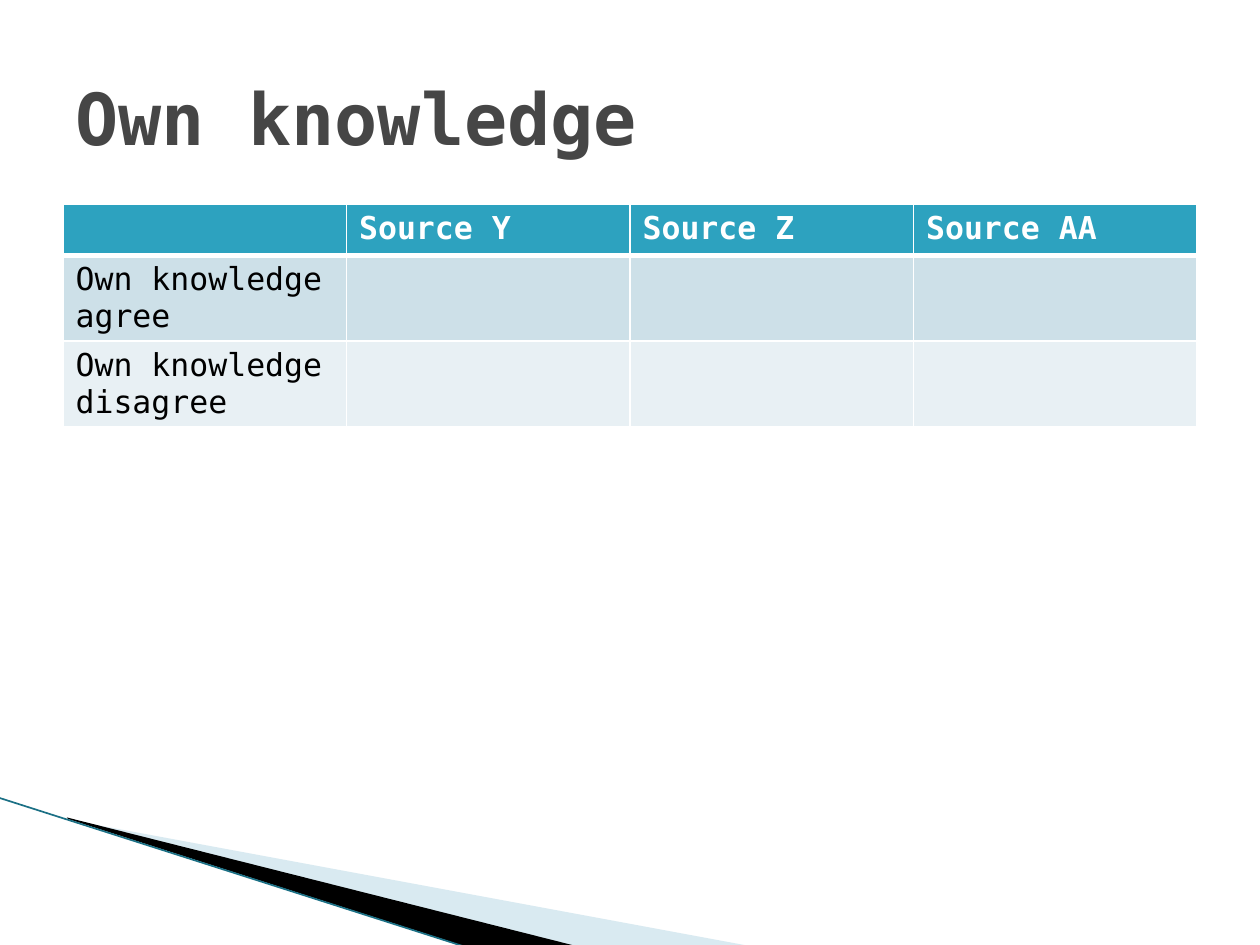
from pptx import Presentation
from pptx.dml.color import RGBColor
from pptx.enum.shapes import MSO_CONNECTOR
from pptx.enum.text import MSO_ANCHOR, PP_ALIGN
from pptx.oxml.ns import qn
from pptx.util import Cm, Pt
from lxml import etree

LEFT, MIDDLE = PP_ALIGN.LEFT, MSO_ANCHOR.MIDDLE
STRAIGHT = MSO_CONNECTOR.STRAIGHT

TITLE = "Own knowledge"
ROWS = [
    ["", "Source Y", "Source Z", "Source AA"],
    ["Own knowledge agree", "", "", ""],
    ["Own knowledge disagree", "", "", ""],
]

THEME = {
    "fills": ["2DA2BF", "CDE0E8", "E8F0F4"],
    "border": "FFFFFF",
    "edge": "1B7085",
    "title": {"name": "DejaVu Sans Mono", "size": Pt(41), "bold": True, "color": "464646"},
    "head": {"name": "DejaVu Sans Mono", "size": Pt(18), "bold": True, "color": "FFFFFF"},
    "body": {"name": "DejaVu Sans Mono", "size": Pt(18), "bold": False, "color": "000000"},
}

# Corner points in cm, fill colour, opacity in percent
WEDGES = [
    ([(1.4, 16.53), (15.11, 19.07), (11.58, 19.07), (1.4, 16.51)], "A0CBDC", 40),
    ([(1.35, 16.48), (11.61, 19.07), (9.45, 19.1), (1.37, 16.51)], "000000", 100),
]
EDGE = [(-0.03, 16.08), (9.42, 19.1)]

MARGIN, WIDTH = 1.27, 22.86
TITLE_TOP, TITLE_HIGH = 0.76, 3.18
TABLE_TOP, ROW_HIGH = 4.12, 1.03
THIN, THICK = Pt(1), Pt(3)


def style(font, look):
    for key, value in look.items():
        if key == "color":
            font.color.rgb = RGBColor.from_string(value)
        else:
            setattr(font, key, value)


def paint(fill, color):
    fill.solid()
    fill.fore_color.rgb = RGBColor.from_string(color)


def add_wedge(slide, points, color, alpha):
    start, *rest = [(Cm(x), Cm(y)) for x, y in points]
    build = slide.shapes.build_freeform(*start)
    build.add_line_segments(rest, close=True)
    wedge = build.convert_to_shape()
    wedge.shadow.inherit = False
    wedge.line.fill.background()
    paint(wedge.fill, color)
    if alpha < 100:
        tone = wedge.fill._xPr.find(".//" + qn("a:srgbClr"))
        etree.SubElement(tone, qn("a:alpha"), val=str(alpha * 1000))


def add_edge(slide):
    ends = [Cm(n) for point in EDGE for n in point]
    edge = slide.shapes.add_connector(STRAIGHT, *ends)
    edge.line.width = Pt(0.95)
    paint(edge.line.fill, THEME["edge"])
    etree.SubElement(edge._element.spPr, qn("a:effectLst"))


def set_border(cell, sides):
    props = cell._tc.get_or_add_tcPr()
    for side, width in sides.items():
        line = etree.SubElement(props, qn("a:ln" + side), w=str(width))
        fill = etree.SubElement(line, qn("a:solidFill"))
        etree.SubElement(fill, qn("a:srgbClr"), val=THEME["border"])


def add_grid(slide):
    place = [Cm(n) for n in (MARGIN, TABLE_TOP, WIDTH, ROW_HIGH * len(ROWS))]
    table = slide.shapes.add_table(len(ROWS), len(ROWS[0]), *place).table
    for r, row in enumerate(ROWS):
        look = THEME["body" if r else "head"]
        sides = {
            "L": THIN,
            "R": THIN,
            "T": THICK if r == 1 else THIN,
            "B": THICK if r == 0 else THIN,
        }
        for c, text in enumerate(row):
            cell = table.cell(r, c)
            set_border(cell, sides)
            paint(cell.fill, THEME["fills"][r])
            cell.text = text
            style(cell.text_frame.paragraphs[0].font, look)


def set_title(slide):
    title = slide.shapes.title
    title.left, title.top = Cm(MARGIN), Cm(TITLE_TOP)
    title.width, title.height = Cm(WIDTH), Cm(TITLE_HIGH)
    title.text = TITLE
    title.text_frame.vertical_anchor = MIDDLE
    para = title.text_frame.paragraphs[0]
    para.alignment = LEFT
    style(para.font, THEME["title"])


def main():
    deck = Presentation()
    deck.slide_width, deck.slide_height = Cm(25.4), Cm(19.05)
    slide = deck.slides.add_slide(deck.slide_layouts[5])
    for wedge in WEDGES:
        add_wedge(slide, *wedge)
    add_edge(slide)
    add_grid(slide)
    set_title(slide)
    deck.save("out.pptx")


if __name__ == "__main__":
    main()
